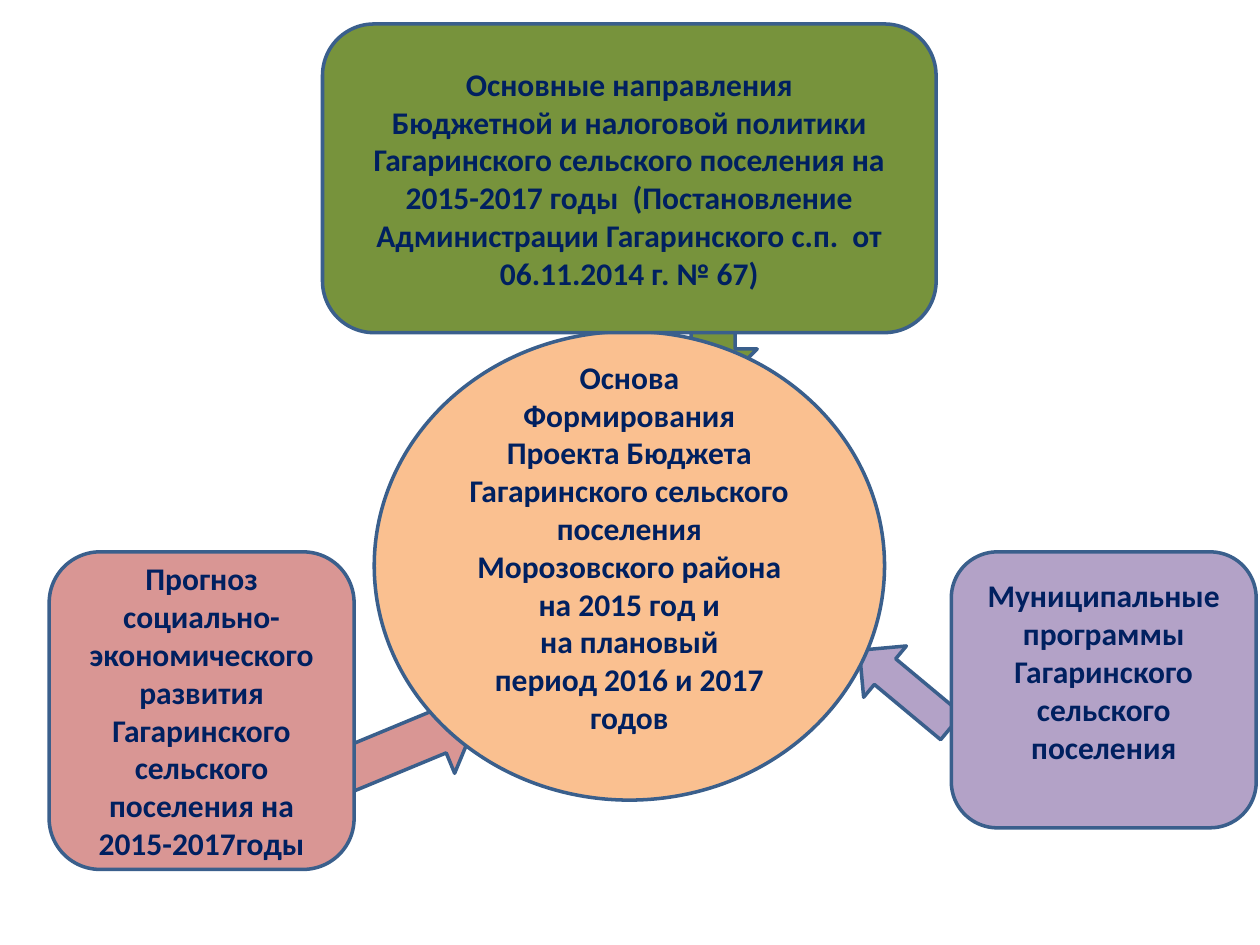
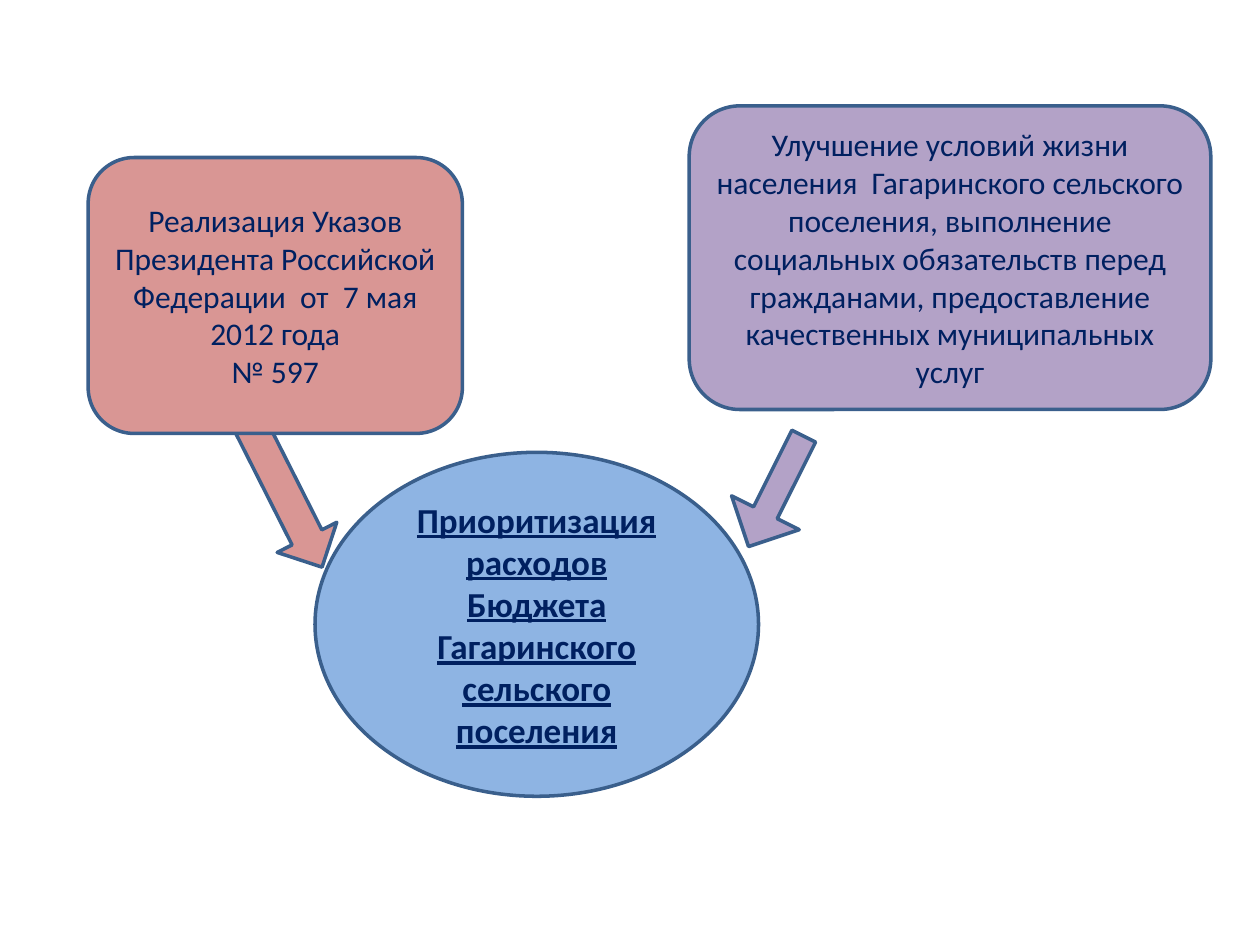
"""Build two slides on what shapes the settlement budget and its spending priorities."""
from pptx import Presentation
from pptx.dml.color import RGBColor
from pptx.enum.shapes import MSO_SHAPE
from pptx.enum.text import MSO_ANCHOR, PP_ALIGN
from pptx.util import Inches, Pt

COLORS = {
    "outline": "3A5F8C",
    "text": "002060",
    "rose": "D99694",
    "green": "77933C",
    "lilac": "B3A2C7",
    "peach": "FAC090",
    "blue": "8EB4E3",
}
FONT = "Calibri"
BOX = MSO_SHAPE.ROUNDED_RECTANGLE
OVAL = MSO_SHAPE.OVAL
DOWN = MSO_SHAPE.DOWN_ARROW
BOLD = {"bold": True}
RAISED = {"bold": True, "bottom": 0.35}
HEADLINE = {"bold": True, "underline": True, "size": 20}

BUDGET_BASIS = [
    {"kind": MSO_SHAPE.RIGHT_ARROW, "at": (2.49, 5.59, 1.36, 0.7), "fill": "rose", "rotation": 337.5},
    {"kind": DOWN, "at": (5.31, 2.42, 0.7, 0.7), "fill": "green"},
    {"kind": MSO_SHAPE.LEFT_ARROW, "at": (6.71, 5.2, 0.95, 0.53), "fill": "lilac", "rotation": 39.8},
    {"kind": OVAL, "at": (2.97, 2.63, 4.05, 3.72), "fill": "peach", "style": RAISED, "lines": [
        "Основа",
        "Формирования",
        "Проекта Бюджета Гагаринского сельского поселения Морозовского района",
        "на 2015 год и",
        "на плановый",
        "период 2016 и 2017 годов",
    ]},
    {"kind": BOX, "at": (7.55, 4.38, 2.42, 2.19), "fill": "lilac", "style": RAISED, "lines": [
        "Муниципальные программы",
        "Гагаринского сельского поселения",
    ]},
    {"kind": BOX, "at": (2.56, 0.19, 4.87, 2.45), "fill": "green", "style": BOLD, "lines": [
        "Основные направления",
        "Бюджетной и налоговой политики Гагаринского сельского поселения на 2015-2017 годы  "
        "(Постановление Администрации Гагаринского с.п.  от 06.11.2014 г. № 67)",
    ]},
    {"kind": BOX, "at": (0.39, 4.38, 2.42, 2.52), "fill": "rose", "style": BOLD, "lines": [
        "Прогноз социально-экономического развития Гагаринского сельского поселения на 2015-2017годы",
    ]},
]
SPENDING_PRIORITIES = [
    {"kind": OVAL, "at": (2.5, 3.59, 3.52, 2.73), "fill": "blue", "style": HEADLINE, "lines": [
        "Приоритизация",
        "расходов",
        "Бюджета",
        "Гагаринского сельского поселения",
    ]},
    {"kind": DOWN, "at": (2, 3.28, 0.53, 1.29), "fill": "rose", "rotation": 333.2},
    {"kind": DOWN, "at": (5.86, 3.41, 0.6, 0.98), "fill": "lilac", "rotation": 26.6, "adjustments": (0.35, 0.5)},
    {"kind": BOX, "at": (0.7, 1.25, 2.97, 2.19), "fill": "rose", "lines": [
        "Реализация Указов Президента Российской Федерации  от  7 мая 2012 года",
        "№ 597",
    ]},
    {"kind": BOX, "at": (5.47, 0.84, 4.14, 2.41), "fill": "lilac", "lines": [
        "Улучшение условий жизни населения  Гагаринского сельского поселения, выполнение "
        "социальных обязательств перед гражданами, предоставление качественных муниципальных услуг",
    ]},
]


def color(name):
    return RGBColor.from_string(COLORS[name])


def write_lines(shape, lines, bold=False, underline=False, size=18, bottom=0.05):
    frame = shape.text_frame
    frame.word_wrap = True
    frame.vertical_anchor = MSO_ANCHOR.MIDDLE
    frame.margin_bottom = Inches(bottom)
    frame.text = "\n".join(lines)
    for paragraph in frame.paragraphs:
        paragraph.alignment = PP_ALIGN.CENTER
        font = paragraph.font
        font.name, font.size = FONT, Pt(size)
        font.bold, font.underline = bold, underline
        font.color.rgb = color("text")


def draw(slide, kind, at, fill, rotation=0, adjustments=(), lines=(), style=None):
    shape = slide.shapes.add_shape(kind, *map(Inches, at))
    shape.shadow.inherit = False
    shape.rotation = rotation
    for index, value in enumerate(adjustments):
        shape.adjustments[index] = value
    shape.fill.solid()
    shape.fill.fore_color.rgb = color(fill)
    shape.line.color.rgb = color("outline")
    shape.line.width = Pt(2)
    if lines:
        write_lines(shape, lines, **(style or {}))


def main():
    presentation = Presentation()
    presentation.slide_width, presentation.slide_height = Inches(10), Inches(7.5)
    for parts in (BUDGET_BASIS, SPENDING_PRIORITIES):
        slide = presentation.slides.add_slide(presentation.slide_layouts[6])
        for part in parts:
            draw(slide, **part)
    presentation.save("out.pptx")


if __name__ == "__main__":
    main()
